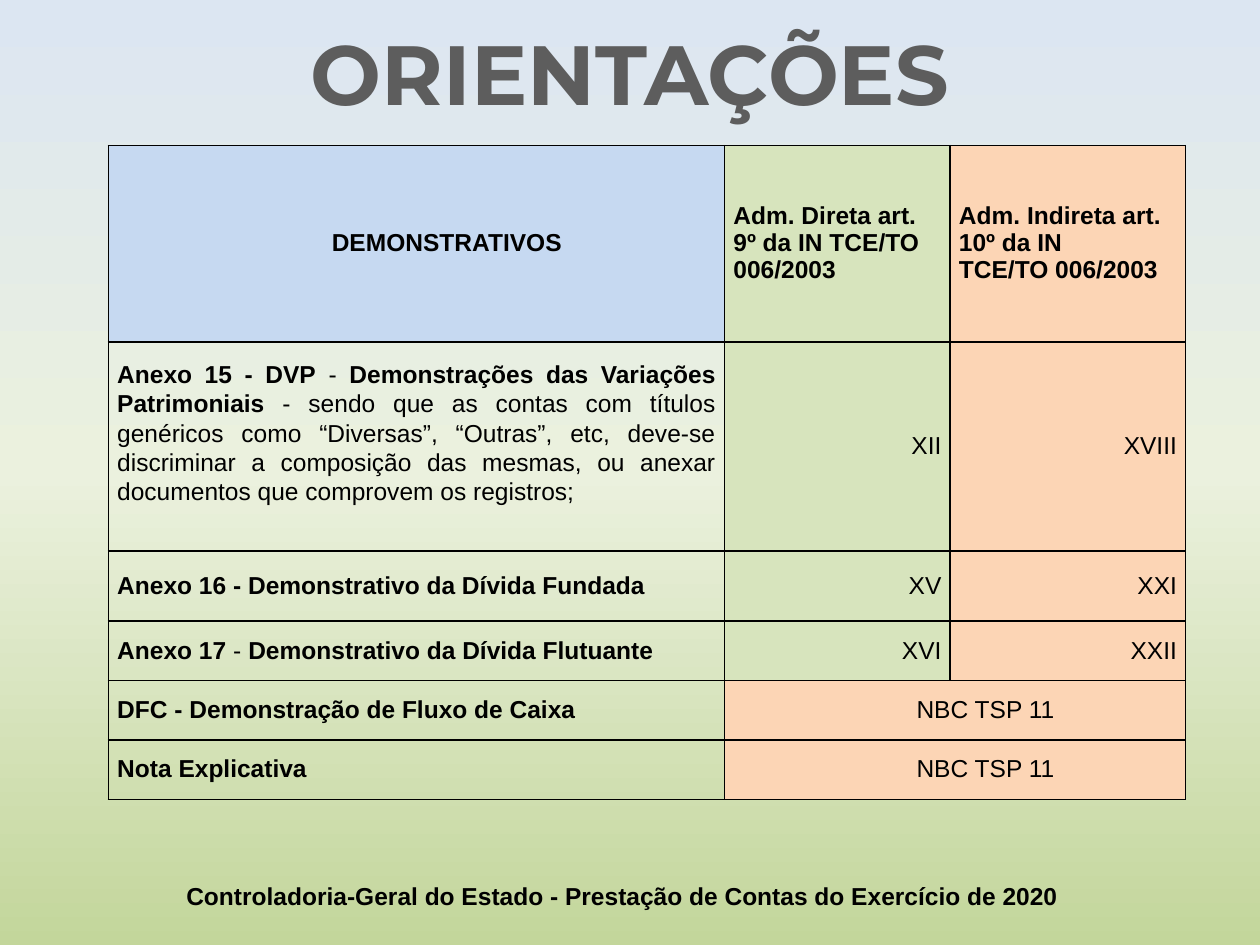
import copy
from dataclasses import dataclass

import pptx
import pptx.dml.color
import pptx.enum.text
import pptx.oxml
import pptx.oxml.ns
import pptx.util

Pt = pptx.util.Pt
RGBColor = pptx.dml.color.RGBColor
Align = pptx.enum.text.PP_ALIGN
Anchor = pptx.enum.text.MSO_ANCHOR
qn = pptx.oxml.ns.qn

BLACK = RGBColor(0x00, 0x00, 0x00)
TITLE_GRAY = RGBColor(0x5D, 0x5D, 0x5D)
BLUE = RGBColor(0xC6, 0xD9, 0xF1)
GREEN = RGBColor(0xD7, 0xE4, 0xBD)
ORANGE = RGBColor(0xFC, 0xD5, 0xB5)
BACKGROUND = (
    RGBColor(0xDC, 0xE6, 0xF2),
    RGBColor(0xEB, 0xF1, 0xDE),
    RGBColor(0xC3, 0xD6, 0x9B),
)
COLUMN_WIDTHS = (352.1, 128.9, 134.6)
ROW_HEIGHTS = (112.3, 119.5, 40, 34, 34, 34)
FIRST_LINE_INDENT = Pt(34.6)


@dataclass(frozen=True)
class Span:
    text: str
    bold: bool = False


@dataclass(frozen=True)
class CellStyle:
    """Paragraph and cell settings; a fill of None leaves the cell clear."""
    align: Align
    fill: RGBColor | None = None
    indent: bool = False
    line_spacing: float = 0.98
    bottom: float = 0


@dataclass(frozen=True)
class TableCell:
    paragraphs: tuple[tuple[Span, ...], ...]
    style: CellStyle
    columns: int = 1


LABEL = CellStyle(Align.JUSTIFY)
LONG_LABEL = CellStyle(Align.JUSTIFY, line_spacing=1.07, bottom=16)
DIRECT = CellStyle(Align.RIGHT, GREEN, True)
INDIRECT = CellStyle(Align.RIGHT, ORANGE, True)
STANDARD = CellStyle(Align.CENTER, ORANGE, True)


def bold(text: str) -> Span:
    return Span(text, True)


def one_line(style: CellStyle, *spans: Span, columns: int = 1) -> TableCell:
    return TableCell((spans,), style, columns)


ROWS = (
    (
        one_line(CellStyle(Align.CENTER, BLUE, True), bold("DEMONSTRATIVOS")),
        one_line(CellStyle(Align.LEFT, GREEN), bold("Adm. Direta art. 9º da IN TCE/TO 006/2003")),
        TableCell(
            ((bold("Adm. Indireta art. 10º da IN"),), (bold("TCE/TO 006/2003"),)),
            CellStyle(Align.LEFT, ORANGE),
        ),
    ),
    (
        one_line(
            LONG_LABEL,
            bold("Anexo 15 - DVP"),
            Span(" - "),
            bold("Demonstrações das Variações Patrimoniais"),
            Span(" - sendo que as contas com títulos genéricos como “Diversas”, “Outras”, etc, "
                 "deve-se discriminar a composição das mesmas, ou anexar documentos que "
                 "comprovem os registros;"),
        ),
        one_line(DIRECT, Span("XII")),
        one_line(INDIRECT, Span("XVIII")),
    ),
    (
        one_line(LABEL, bold("Anexo 16 - Demonstrativo da Dívida Fundada")),
        one_line(DIRECT, Span("XV")),
        one_line(INDIRECT, Span("XXI")),
    ),
    (
        one_line(LABEL, bold("Anexo 17"), Span(" - "), bold("Demonstrativo da Dívida Flutuante")),
        one_line(DIRECT, Span("XVI")),
        one_line(INDIRECT, Span("XXII")),
    ),
    (
        one_line(LABEL, bold("DFC - Demonstração de Fluxo de Caixa")),
        one_line(STANDARD, Span("NBC TSP 11"), columns=2),
    ),
    (
        one_line(LABEL, bold("Nota Explicativa")),
        one_line(STANDARD, Span("NBC TSP 11"), columns=2),
    ),
)


def add_span(para, span: Span, size: float = 14, font: str = "Arial",
             color: RGBColor = BLACK) -> None:
    run = para.add_run()
    run.text = span.text
    run.font.name = font
    run.font.size = Pt(size)
    run.font.bold = span.bold
    run.font.color.rgb = color


def paint_background(page) -> None:
    fill = page.background.fill
    fill.gradient()
    fill.gradient_angle = 270
    stop_list = page._element.find(".//" + qn("a:gsLst"))
    stop_list.append(copy.deepcopy(stop_list[0]))
    for index, (stop, color) in enumerate(zip(fill.gradient_stops, BACKGROUND)):
        stop.position = index / 2
        stop.color.rgb = color


def draw_borders(cell) -> None:
    properties = cell._tc.get_or_add_tcPr()
    for index, side in enumerate(("lnL", "lnR", "lnT", "lnB")):
        properties.insert(index, pptx.oxml.parse_xml(
            f'<a:{side} {pptx.oxml.ns.nsdecls("a")} w="{Pt(1)}">'
            f'<a:solidFill><a:srgbClr val="{BLACK}"/></a:solidFill></a:{side}>'))


def fill_cell(cell, content: TableCell) -> None:
    style = content.style
    cell.vertical_anchor = Anchor.MIDDLE
    cell.margin_left = cell.margin_right = Pt(5)
    cell.margin_top = 0
    cell.margin_bottom = Pt(style.bottom)
    for index, spans in enumerate(content.paragraphs):
        frame = cell.text_frame
        para = frame.add_paragraph() if index else frame.paragraphs[0]
        para.alignment = style.align
        para.line_spacing = style.line_spacing
        if style.indent:
            para._p.get_or_add_pPr().set("indent", str(FIRST_LINE_INDENT))
        for span in spans:
            add_span(para, span)


def paint_cell(cell, color: RGBColor | None) -> None:
    if color is None:
        cell.fill.background()
    else:
        cell.fill.solid()
        cell.fill.fore_color.rgb = color
    draw_borders(cell)


def add_statement_table(page) -> None:
    table = page.shapes.add_table(
        len(ROWS), len(COLUMN_WIDTHS), Pt(62), Pt(83.2),
        Pt(sum(COLUMN_WIDTHS)), Pt(sum(ROW_HEIGHTS))).table
    table.first_row = table.horz_banding = False
    for column, width in zip(table.columns, COLUMN_WIDTHS):
        column.width = Pt(width)
    for row, height in zip(table.rows, ROW_HEIGHTS):
        row.height = Pt(height)
    for r, contents in enumerate(ROWS):
        for c, content in enumerate(contents):
            last = c + content.columns - 1
            if last > c:
                table.cell(r, c).merge(table.cell(r, last))
            fill_cell(table.cell(r, c), content)
            for covered in range(c, last + 1):
                paint_cell(table.cell(r, covered), content.style.fill)


def add_footer(page) -> None:
    box = page.shapes.add_textbox(Pt(39.6), Pt(499.7), Pt(632.2), Pt(24.5))
    box.text_frame.word_wrap = True
    para = box.text_frame.paragraphs[0]
    para.alignment = Align.CENTER
    add_span(para, bold("Controladoria-Geral do Estado - Prestação de Contas do Exercício de 2020"))


def write_title(page) -> None:
    title = page.shapes.title
    title.left, title.top, title.width, title.height = Pt(4.3), Pt(8.6), Pt(711.4), Pt(65.5)
    title.text_frame.vertical_anchor = Anchor.TOP
    para = title.text_frame.paragraphs[0]
    para.alignment = Align.CENTER
    add_span(para, bold("ORIENTAÇÕES"), 48, "Montserrat", TITLE_GRAY)


def main() -> None:
    deck = pptx.Presentation()
    deck.slide_width, deck.slide_height = Pt(720), Pt(540)
    page = deck.slides.add_slide(deck.slide_layouts[5])
    paint_background(page)
    add_footer(page)
    add_statement_table(page)
    write_title(page)
    deck.save("out.pptx")


if __name__ == "__main__":
    main()
